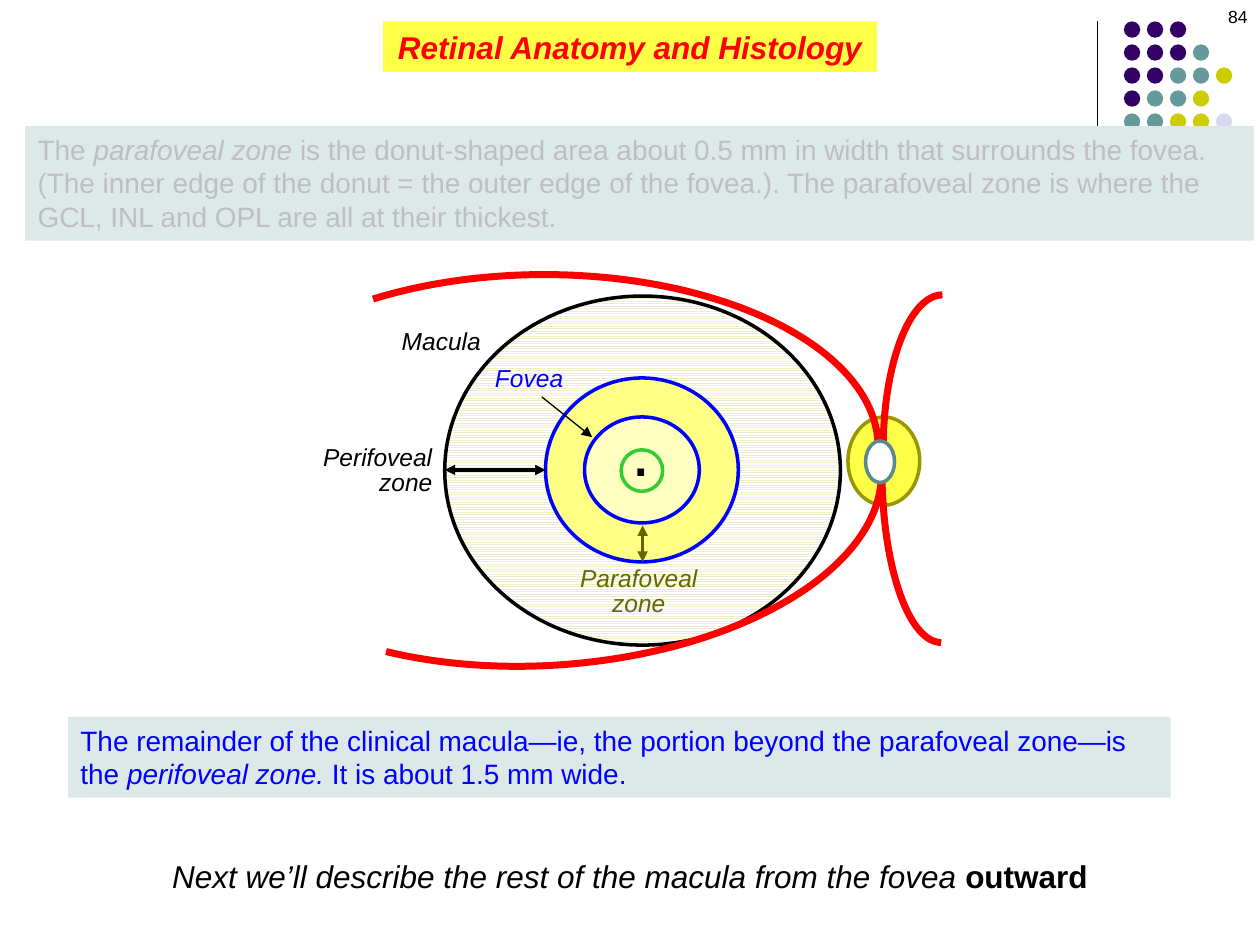
from lxml.etree import SubElement
from pptx import Presentation
from pptx.dml.color import RGBColor
from pptx.enum.dml import MSO_PATTERN
from pptx.enum.shapes import MSO_CONNECTOR, MSO_SHAPE as Preset
from pptx.enum.text import MSO_ANCHOR, PP_ALIGN as Align
from pptx.oxml.ns import qn
from pptx.util import Inches, Pt

BLACK, RED, BLUE = "000000", "FF0000", "0000FF"
YELLOW, OLIVE, PANEL, GREY = "FFFF47", "666600", "DDE9E9", "BFBFBF"
DOT_COLORS = {"P": "330066", "T": "669999", "Y": "CCCC00", "L": "D8D8EC"}
DOT_ROWS = ["PPP", "PPPT", "PPTTY", "PTTY", "TTYYL"]


def color(value):
    return RGBColor.from_string(value)


class RetinaSlide:
    """Holds the text style and the slide, and draws each kind of element."""

    font = "Arial"

    def __init__(self, slide):
        self.slide = slide
        self.shapes = slide.shapes

    def add_runs(self, shape, runs, size, ink, align=Align.LEFT, wrap=True, spacing=None):
        frame = shape.text_frame
        frame.word_wrap = wrap
        frame.vertical_anchor = MSO_ANCHOR.TOP
        frame.margin_left = frame.margin_right = Inches(0.1)
        frame.margin_top = frame.margin_bottom = Inches(0.05)
        paragraph = frame.paragraphs[0]
        paragraph.alignment = align
        if spacing:
            paragraph.line_spacing = Pt(spacing)
        for text, style in runs:
            run = paragraph.add_run()
            run.text = text
            run.font.name = self.font
            run.font.size = Pt(size)
            run.font.color.rgb = color(ink)
            run.font.bold = "b" in style
            run.font.italic = "i" in style

    def title(self, box, runs, size, ink, fill):
        title = self.shapes.title
        title.left, title.top, title.width, title.height = map(Inches, box)
        title.fill.solid()
        title.fill.fore_color.rgb = color(fill)
        self.add_runs(title, runs, size, ink, Align.CENTER, wrap=False)

    def text(self, box, runs, size, ink, **layout):
        self.add_runs(self.shapes.add_textbox(*map(Inches, box)), runs, size, ink, **layout)

    def shape(self, preset, box, fill=None, line=None, width=2):
        shape = self.shapes.add_shape(preset, *map(Inches, box))
        shape.shadow.inherit = False
        if fill:
            shape.fill.solid()
            shape.fill.fore_color.rgb = color(fill)
        else:
            shape.fill.background()
        if line:
            shape.line.color.rgb = color(line)
            shape.line.width = Pt(width)
        else:
            shape.line.fill.background()
        return shape

    def panel(self, box, runs, ink):
        self.add_runs(self.shape(Preset.RECTANGLE, box, PANEL), runs, 16, ink)

    def vessel(self, box, flips=(), start=None, rotation=0):
        arc = self.shape(Preset.ARC, box, line=RED, width=4)
        arc.rotation = rotation
        if start:
            arc.adjustments[0] = start
        for flip in flips:
            arc.element.spPr.find(qn("a:xfrm")).set(flip, "1")

    def line(self, start, end, ink, width, ends=()):
        line = self.shapes.add_connector(MSO_CONNECTOR.STRAIGHT, *map(Inches, start + end))
        line.line.color.rgb = color(ink)
        line.line.width = Pt(width)
        properties = line.element.spPr
        for end_name in ends:
            SubElement(properties.find(qn("a:ln")), qn(f"a:{end_name}"), type="triangle")
        SubElement(properties, qn("a:effectLst"))

    def dots(self, left, top, pitch, size):
        for row, letters in enumerate(DOT_ROWS):
            for column, letter in enumerate(letters):
                box = (left + column * pitch, top + row * pitch, size, size)
                self.shape(Preset.OVAL, box, DOT_COLORS[letter])


def main():
    presentation = Presentation()
    presentation.slide_width, presentation.slide_height = Inches(10), Inches(7.5)
    retina = RetinaSlide(presentation.slides.add_slide(presentation.slide_layouts[5]))
    both_ends = ("headEnd", "tailEnd")

    retina.line((8.71, 0.17), (8.71, 1.83), BLACK, 0.75)
    retina.dots(8.92, 0.17, 0.73 / 4, 0.13)
    macula = retina.shape(Preset.OVAL, (3.53, 2.35, 3.14, 2.77), line=BLACK)
    macula.fill.patterned()
    macula.fill.pattern = MSO_PATTERN.LIGHT_HORIZONTAL
    macula.fill.fore_color.rgb = color("EEEECC")
    macula.fill.back_color.rgb = color("FFFFFF")
    retina.title((3.04, 0.17, 3.92, 0.4), [("Retinal Anatomy and Histology", "bi")], 18, RED, YELLOW)
    retina.text((7.67, 0, 2.33, 0.5), [("84", "")], 10, BLACK, align=Align.RIGHT)

    retina.shape(Preset.OVAL, (6.73, 3.31, 0.57, 0.7), YELLOW, "979700")
    retina.vessel((1.67, 2.18, 5.3, 2.74), start=132.524)
    retina.vessel((1.7, 2.51, 5.3, 2.77), ["flipV"], start=132.524, rotation=356.1)
    retina.vessel((7.01, 2.34, 0.94, 2.45), ["flipH"])
    retina.vessel((7, 2.36, 0.94, 2.74), ["flipH", "flipV"])
    retina.shape(Preset.OVAL, (6.87, 3.5, 0.23, 0.33), "FFFFFF", "5C8A8A")

    retina.text((3.09, 2.54, 0.83, 0.34), [("Macula", "i")], 14, BLACK, wrap=False)
    retina.text(
        (1.23, 6.75, 7.54, 0.4),
        [("Next we’ll describe the rest of the macula from the fovea ", "i"), ("outward", "b")],
        18, BLACK, align=Align.CENTER, wrap=False,
    )
    retina.shape(Preset.OVAL, (4.47, 3.2, 1.23, 1.14), "FFFFC2", BLACK)
    retina.text((4.91, 3.18, 0.42, 0.77), [(".", "")], 40, BLACK)
    retina.shape(Preset.OVAL, (4.93, 3.57, 0.33, 0.33), line="33CC33")
    parafovea = retina.shape(Preset.DONUT, (4.33, 3, 1.53, 1.46), "FFFF85", BLUE)
    parafovea.adjustments[0] = 0.212
    retina.text((3.83, 2.83, 0.75, 0.34), [("Fovea", "i")], 14, BLUE, wrap=False)
    retina.line((4.3, 3.15), (4.7, 3.47), BLACK, 0.75, ["tailEnd"])
    retina.text((4.46, 4.46, 1.22, 0.49), [("Parafoveal zone", "i")], 14, OLIVE,
                align=Align.CENTER, spacing=14)
    retina.line((5.1, 4.17), (5.1, 4.46), OLIVE, 2, both_ends)
    retina.line((3.53, 3.73), (4.33, 3.73), BLACK, 1.75, both_ends)
    retina.panel((0.54, 5.69, 8.75, 0.64), [
        ("The remainder of the clinical macula—ie, the portion beyond the parafoveal zone—is the ", ""),
        ("perifoveal zone. ", "i"),
        ("It is about 1.5 mm wide.", ""),
    ], BLUE)
    retina.text((2.43, 3.5, 1.1, 0.49), [("Perifoveal zone", "i")], 14, BLACK,
                align=Align.RIGHT, spacing=14)
    retina.panel((0.2, 1, 9.75, 0.91), [
        ("The ", ""),
        ("parafoveal zone ", "i"),
        ("is the donut-shaped area about 0.5 mm in width that surrounds the fovea. "
         "(The inner edge of the donut = the outer edge of the fovea.). The parafoveal zone "
         "is where the GCL, INL and OPL are all at their thickest.", ""),
    ], GREY)
    presentation.save("out.pptx")


if __name__ == "__main__":
    main()
